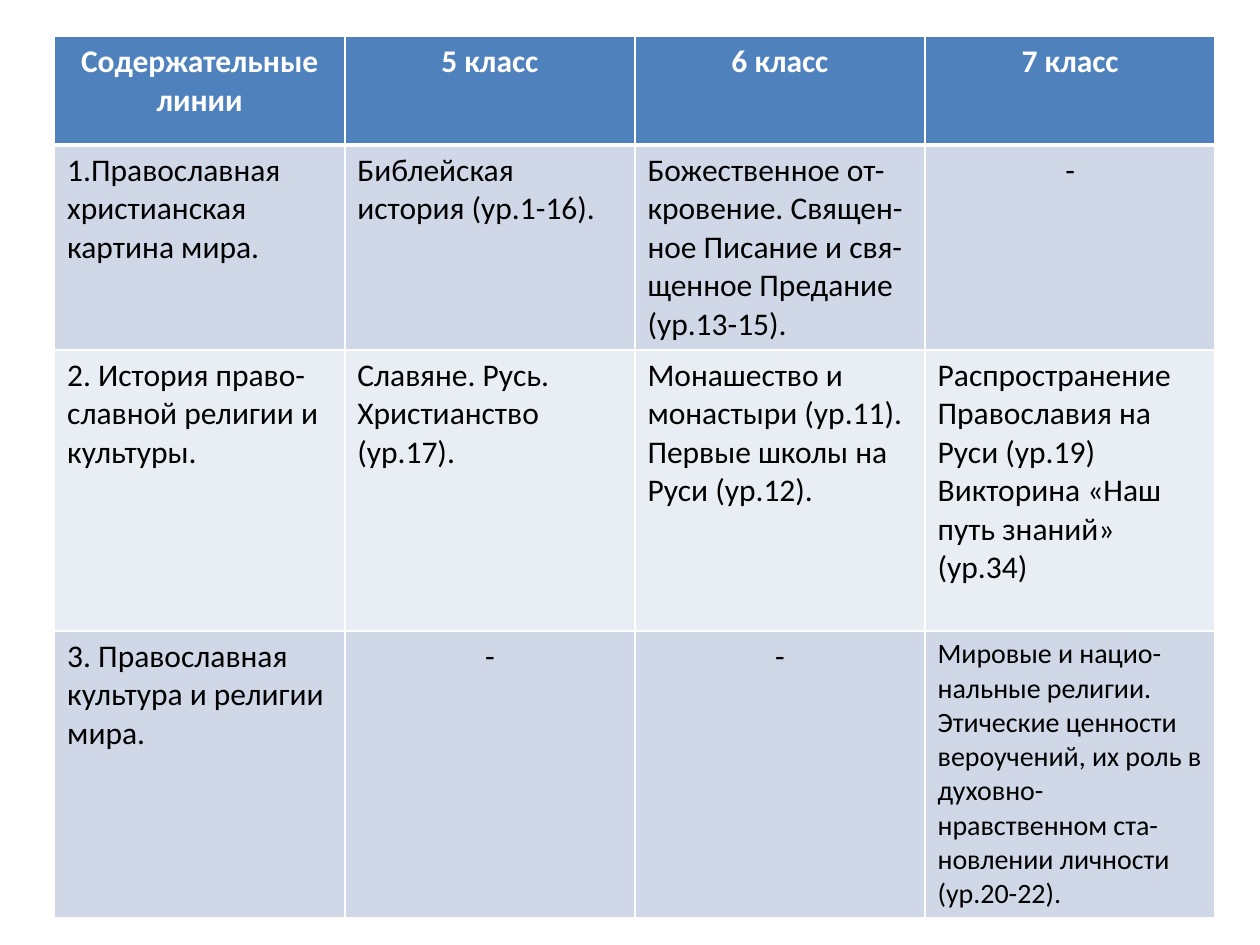
"""Build a slide with a table of course content lines by school grade."""
from lxml import etree
from pptx import Presentation
from pptx import util as u
from pptx.dml.color import RGBColor
from pptx.enum import text
from pptx.oxml.ns import qn

ROWS = [
    ["Содержательные линии", "5 класс", "6 класс", "7 класс"],
    ["1.Православная христианская картина мира.",
     "Библейская история (ур.1-16).",
     "Божественное от-кровение. Священ-ное Писание и свя-щенное Предание (ур.13-15).",
     "-"],
    ["2. История право-славной религии и культуры.",
     "Славяне. Русь.\nХристианство (ур.17).",
     "Монашество и монастыри (ур.11). Первые школы на Руси (ур.12).",
     "Распространение Православия на Руси (ур.19)\nВикторина «Наш путь знаний» (ур.34)"],
    ["3. Православная культура и религии мира.", "-", "-",
     "Мировые и нацио-нальные религии. Этические ценности вероучений, их роль в "
     "духовно-нравственном ста-новлении личности (ур.20-22)."],
]
COLORS = {"header": "4F81BD", "odd": "D0D8E8", "even": "E9EDF4",
          "white": "FFFFFF", "black": "000000"}
LEFT, TOP, COL_WIDTH = 31.2, 20.8, 165.8
ROW_HEIGHTS = [62.1, 117.1, 160.6, 163.4]
FONT, SIZE, SMALL_SIZE, LONG_TEXT = "Calibri", 18, 16, 100


def add_borders(cell, bottom):
    tc_pr = cell._tc.get_or_add_tcPr()
    for side, width in (("L", 1), ("R", 1), ("T", 1), ("B", bottom)):
        ln = etree.SubElement(tc_pr, qn(f"a:ln{side}"), w=str(u.Pt(width)))
        fill = etree.SubElement(ln, qn("a:solidFill"))
        etree.SubElement(fill, qn("a:srgbClr"), val=COLORS["white"])


def fill_cell(cell, content, row):
    header = row == 0
    add_borders(cell, 3 if header else 1)
    cell.fill.solid()
    band = "header" if header else "odd" if row % 2 else "even"
    cell.fill.fore_color.rgb = RGBColor.from_string(COLORS[band])
    tf = cell.text_frame
    tf.text = content
    for p in tf.paragraphs:
        if header or content == "-":
            p.alignment = text.PP_ALIGN.CENTER
        for r in p.runs:
            r.font.name = FONT
            r.font.size = u.Pt(SMALL_SIZE if len(content) > LONG_TEXT else SIZE)
            r.font.bold = header
            color = COLORS["white" if header else "black"]
            r.font.color.rgb = RGBColor.from_string(color)


def main():
    prs = Presentation()
    prs.slide_width, prs.slide_height = u.Pt(720), u.Pt(540)
    s = prs.slides.add_slide(prs.slide_layouts[6])
    n_cols = len(ROWS[0])
    table = s.shapes.add_table(
        len(ROWS), n_cols, u.Pt(LEFT), u.Pt(TOP),
        u.Pt(COL_WIDTH * n_cols), u.Pt(sum(ROW_HEIGHTS))).table
    for column in table.columns:
        column.width = u.Pt(COL_WIDTH)
    for i, (contents, height) in enumerate(zip(ROWS, ROW_HEIGHTS)):
        table.rows[i].height = u.Pt(height)
        for j, content in enumerate(contents):
            fill_cell(table.cell(i, j), content, i)
    prs.save("out.pptx")


if __name__ == "__main__":
    main()
